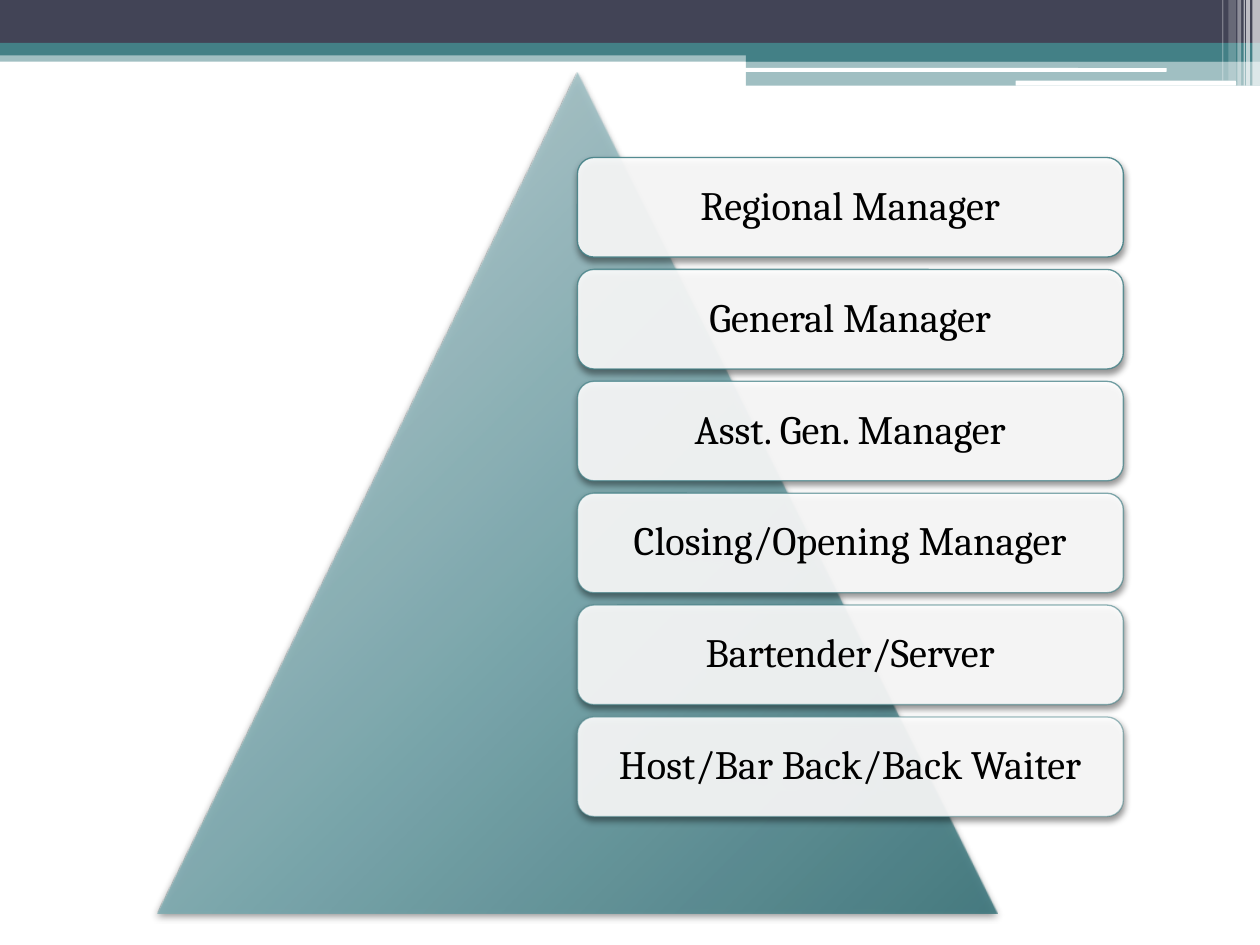
from lxml import etree
from pptx import Presentation
from pptx import util as u
from pptx.dml.color import RGBColor
from pptx.enum import shapes, text
from pptx.oxml import ns, parse_xml

COLORS = {
    "navy": "424456", "teal": "438086", "white": "FFFFFF", "black": "000000",
    "pale": "C7D7DA", "middle": "77A7AD", "deep": "3E777D",
}
COLUMNS, ROWS = 100, 75
ROLES = [
    "Regional Manager", "General Manager", "Asst. Gen. Manager",
    "Closing/Opening Manager", "Bartender/Server", "Host/Bar Back/Back Waiter",
]
HEADER_BARS = [
    (0, 4, 100, 0.9, "teal", 50),
    (0, 0, 100, 3.4, "navy", 100),
    (0, 3.4, 100, 1, "teal", 100),
    (59.2, 3.9, 40.8, 1, "teal", 100),
    (59.2, 4.8, 40.8, 2, "teal", 50),
]
HEADER_SLOTS = [(59.1, 5.4, 33.5, 0.3), (80.6, 6.4, 17.5, 0.4)]
HEADER_STRIPES = [
    (99.4, 0.6, 6.8, 65), (98.9, 0.3, 6.8, 65), (98.7, 0.1, 6.8, 60),
    (98.2, 0.3, 6.8, 40), (97.5, 0.6, 6.4, 20), (97, 0.1, 6.4, 30),
]


class SlideBuilder:
    """Hold the slide style and draw each kind of element on a grid."""

    frame_format = {
        "word_wrap": True, "vertical_anchor": text.MSO_ANCHOR.MIDDLE,
        "margin_left": u.Inches(0.14), "margin_right": u.Inches(0.14),
        "margin_top": u.Inches(0.14), "margin_bottom": u.Inches(0.14),
    }
    paragraph_format = {"alignment": text.PP_ALIGN.CENTER, "line_spacing": 0.9}
    font_format = {"name": "Cambria", "size": u.Pt(23)}

    def __init__(self, presentation):
        self.slide = presentation.slides.add_slide(presentation.slide_layouts[6])
        self.column = presentation.slide_width / COLUMNS
        self.row = presentation.slide_height / ROWS

    def apply(self, target, values):
        for name, value in values.items():
            setattr(target, name, value)

    def fade(self, shape, where, alpha):
        for color in shape.element.spPr.xpath(where + "/a:srgbClr"):
            etree.SubElement(color, ns.qn("a:alpha"), val=str(alpha * 1000))

    def block(self, kind, left, top, width, height, color, alpha=100):
        shape = self.slide.shapes.add_shape(
            kind, round(left * self.column), round(top * self.row),
            round(width * self.column), round(height * self.row))
        shape.shadow.inherit = False
        shape.fill.solid()
        shape.fill.fore_color.rgb = RGBColor.from_string(COLORS[color])
        shape.line.fill.background()
        if alpha < 100:
            self.fade(shape, "a:solidFill", alpha)
        return shape

    def cast_shadow(self, shape):
        effects = shape.element.spPr.find(ns.qn("a:effectLst"))
        effects.append(parse_xml(
            f'<a:outerShdw {ns.nsdecls("a")} blurRad="{u.Pt(4)}" dist="{u.Pt(2)}" '
            f'dir="5400000" rotWithShape="0"><a:srgbClr val="{COLORS["black"]}">'
            '<a:alpha val="45000"/></a:srgbClr></a:outerShdw>'))

    def pyramid(self, left, top, width, height):
        shape = self.block(shapes.MSO_SHAPE.ISOSCELES_TRIANGLE,
                           left, top, width, height, "middle")
        stops = "".join(
            f'<a:gs pos="{position * 1000}"><a:srgbClr val="{COLORS[color]}">'
            '<a:alpha val="90000"/></a:srgbClr></a:gs>'
            for position, color in [(0, "pale"), (55, "middle"), (100, "deep")])
        gradient = parse_xml(
            f'<a:gradFill {ns.nsdecls("a")} rotWithShape="1"><a:gsLst>{stops}</a:gsLst>'
            '<a:path path="circle"><a:fillToRect l="-40000" t="-90000" r="140000" '
            'b="190000"/></a:path></a:gradFill>')
        properties = shape.element.spPr
        properties.replace(properties.find(ns.qn("a:solidFill")), gradient)
        self.cast_shadow(shape)

    def label(self, words, left, top, width, height, line_alpha):
        shape = self.block(shapes.MSO_SHAPE.ROUNDED_RECTANGLE,
                           left, top, width, height, "white", 90)
        shape.line.color.rgb = RGBColor.from_string(COLORS["teal"])
        shape.line.width = u.Pt(0.75)
        self.fade(shape, "a:ln/a:solidFill", line_alpha)
        self.cast_shadow(shape)
        self.apply(shape.text_frame, self.frame_format)
        paragraph = shape.text_frame.paragraphs[0]
        paragraph.text = words
        self.apply(paragraph, self.paragraph_format)
        self.apply(paragraph.font, self.font_format)
        paragraph.font.color.rgb = RGBColor.from_string(COLORS["black"])


def main():
    presentation = Presentation()
    presentation.slide_width, presentation.slide_height = u.Inches(10), u.Inches(7.5)
    builder = SlideBuilder(presentation)
    for bar in HEADER_BARS:
        builder.block(shapes.MSO_SHAPE.RECTANGLE, *bar)
    for slot in HEADER_SLOTS:
        builder.block(shapes.MSO_SHAPE.ROUNDED_RECTANGLE, *slot, "white")
    for left, width, height, alpha in HEADER_STRIPES:
        builder.block(shapes.MSO_SHAPE.RECTANGLE, left, 0, width, height, "white", alpha)
    builder.pyramid(12.5, 5.8, 66.7, 66.7)
    for index, role in enumerate(ROLES):
        builder.label(role, 45.83, 12.5 + 8.88 * index, 43.33, 7.9, 90 - 8 * index)
    presentation.save("out.pptx")


if __name__ == "__main__":
    main()
